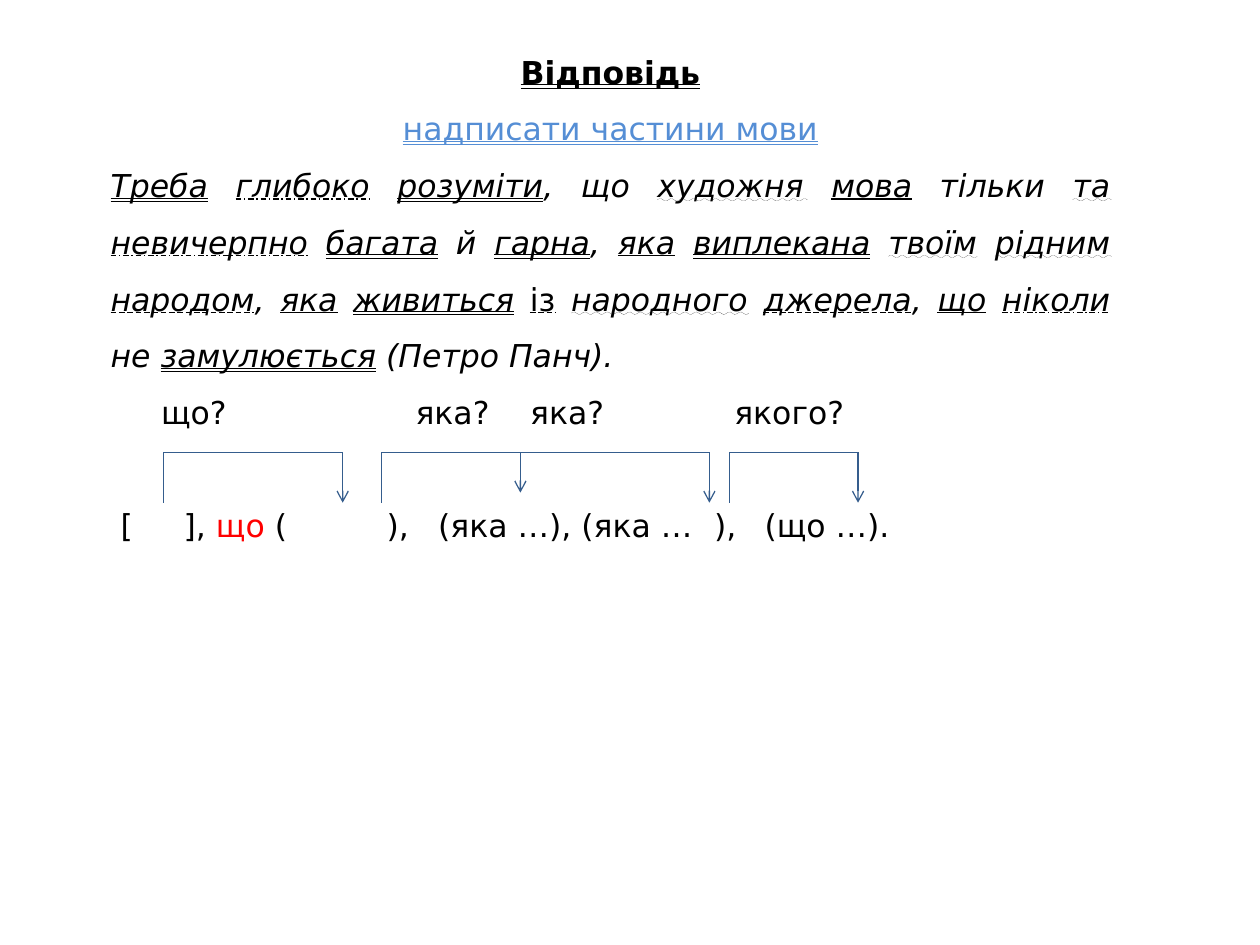
"""Build a slide with a parsed sentence and its clause scheme."""
from typing import NamedTuple

from lxml.etree import SubElement
from pptx import Presentation
from pptx.dml.color import RGBColor
from pptx.enum.shapes import MSO_CONNECTOR as Link
from pptx.enum.text import MSO_ANCHOR as Anchor
from pptx.enum.text import MSO_AUTO_SIZE as Fit
from pptx.enum.text import MSO_UNDERLINE as Under
from pptx.enum.text import PP_ALIGN as Align
from pptx.oxml.ns import qn
from pptx.util import Inches, Pt

BLACK = RGBColor(0x00, 0x00, 0x00)
BLUE = RGBColor(0x55, 0x8E, 0xD5)
RED = RGBColor(0xFF, 0x00, 0x00)
NAVY = RGBColor(0x35, 0x5D, 0x8D)
FONT = "DejaVu Sans"
LEFT, TOP, WIDTH, ROW = 0.78, 0.22, 8.13, 0.45
ROOF, FOOT = 3.59, 3.99

ONE = Under.SINGLE_LINE
TWO = Under.DOUBLE_LINE
DASH = Under.DASH_LINE
DOT = Under.DOT_DASH_LINE
WAVE = Under.WAVY_LINE


class Word(NamedTuple):
    text: str
    line: Under
    tail: str = " "
    slant: bool = True


class Drop(NamedTuple):
    x: float
    foot: float = FOOT


class Arch(NamedTuple):
    left: float
    drops: tuple[Drop, ...]


WORDS = [
    Word("Треба", TWO), Word("глибоко", DOT), Word("розуміти", TWO, ", що "),
    Word("художня", WAVE), Word("мова", ONE, " тільки "), Word("та", WAVE),
    Word("невичерпно", DOT), Word("багата", TWO, " й "), Word("гарна", TWO, ", "),
    Word("яка", ONE), Word("виплекана", TWO), Word("твоїм", WAVE),
    Word("рідним", WAVE), Word("народом", DASH, ", "), Word("яка", ONE),
    Word("живиться", TWO), Word("із", DASH, slant=False), Word("народного", WAVE),
    Word("джерела", DASH, ", "), Word("що", ONE), Word("ніколи", DOT, " не "),
    Word("замулюється", TWO, " (Петро Панч)."),
]
ARCHES = [
    Arch(1.3, (Drop(2.72),)),
    Arch(3.03, (Drop(4.13, 3.91), Drop(5.63))),
    Arch(5.79, (Drop(6.81),)),
]


def style(para, align: Align, color: RGBColor = BLACK) -> None:
    """Set the shared look of a paragraph."""
    para.alignment = align
    para.line_spacing = 1.5
    para.space_before = Pt(0)
    font = para.font
    font.name, font.size, font.color.rgb = FONT, Pt(18), color


def add_run(para, text: str):
    """Append a run and return its font."""
    run = para.add_run()
    run.text = text
    return run.font


def set_tabs(para, stops: list[float]) -> None:
    """Give a paragraph left tab stops in inches."""
    props = para._p.get_or_add_pPr()
    tabs = props.makeelement(qn("a:tabLst"), {})
    for stop in stops:
        SubElement(tabs, qn("a:tab"), pos=str(Inches(stop)), algn="l")
    props.find(qn("a:defRPr")).addprevious(tabs)


def add_line(slide, x1: float, y1: float, x2: float, y2: float, head: bool = False) -> None:
    """Draw a thin line, with an open arrowhead if asked."""
    line = slide.shapes.add_connector(
        Link.STRAIGHT, Inches(x1), Inches(y1), Inches(x2), Inches(y2))
    line.line.color.rgb = NAVY
    line.line.width = Pt(0.75)
    if head:
        SubElement(line.line._get_or_add_ln(), qn("a:tailEnd"), type="arrow")
    SubElement(line._element.spPr, qn("a:effectLst"))


def add_arch(slide, arch: Arch) -> None:
    """Draw a stem, a roof and the arrows that drop from it."""
    add_line(slide, arch.left, FOOT, arch.left, ROOF)
    add_line(slide, arch.left, ROOF, arch.drops[-1].x, ROOF)
    for drop in arch.drops:
        add_line(slide, drop.x, ROOF, drop.x, drop.foot, head=True)


def add_title(slide) -> None:
    """Place the heading."""
    title = slide.shapes.title
    title.left, title.top = Inches(LEFT), Inches(TOP)
    title.width, title.height = Inches(WIDTH), Inches(ROW + 0.1)
    frame = title.text_frame
    frame.auto_size = Fit.NONE
    frame.vertical_anchor = Anchor.TOP
    frame.text = "Відповідь"
    para = frame.paragraphs[0]
    style(para, Align.CENTER)
    para.font.bold = True
    para.font.underline = TWO


def add_body(slide) -> None:
    """Place the task, the sentence, the questions and the scheme."""
    box = slide.shapes.add_textbox(
        Inches(LEFT), Inches(TOP + ROW), Inches(WIDTH), Inches(4.14))
    frame = box.text_frame
    frame.word_wrap = True

    task = frame.paragraphs[0]
    style(task, Align.CENTER, BLUE)
    task.font.underline = TWO
    add_run(task, "надписати частини мови")

    quote = frame.add_paragraph()
    style(quote, Align.JUSTIFY)
    quote.font.italic = True
    for word in WORDS:
        font = add_run(quote, word.text)
        font.underline = word.line
        if not word.slant:
            font.italic = False
        add_run(quote, word.tail)

    asks = frame.add_paragraph()
    style(asks, Align.LEFT)
    set_tabs(asks, [0.4, 2.42, 3.33, 4.95])
    add_run(asks, "\tщо?\tяка?\tяка?\tякого?")

    scheme = frame.add_paragraph()
    style(scheme, Align.LEFT)
    scheme.space_before = Pt(32.4)
    set_tabs(scheme, [0.08, 0.58, 2.19, 2.6, 4.79, 5.19])
    add_run(scheme, "\t[\t], ")
    add_run(scheme, "що").color.rgb = RED
    add_run(scheme, " (\t),\t(яка …), (яка …\t),\t(що …).")


def main() -> None:
    """Build and save the slide."""
    deck = Presentation()
    deck.slide_width, deck.slide_height = Inches(10), Inches(7.5)
    slide = deck.slides.add_slide(deck.slide_layouts[5])
    add_title(slide)
    add_body(slide)
    for arch in ARCHES:
        add_arch(slide, arch)
    deck.save("out.pptx")


if __name__ == "__main__":
    main()
